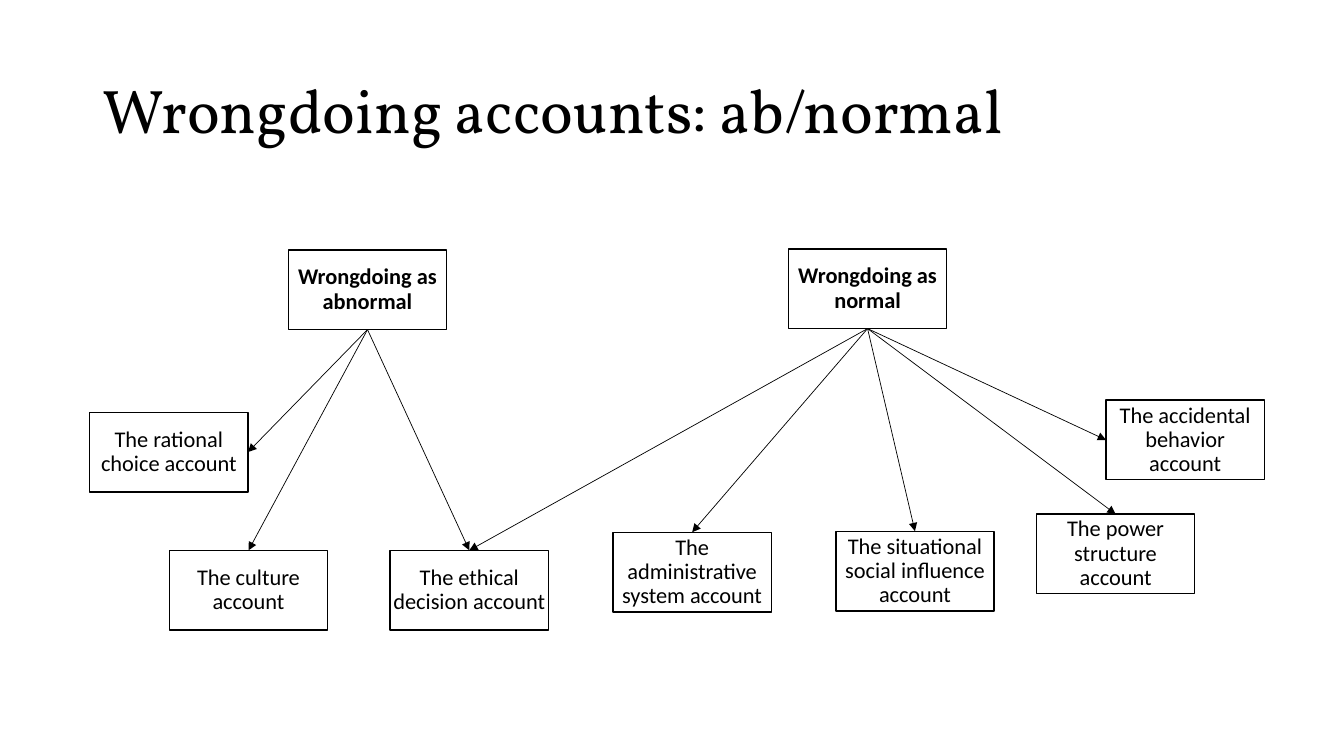
import pptx
import pptx.util
import pptx.dml.color
import pptx.enum.shapes
import pptx.enum.text
import pptx.oxml
import pptx.oxml.ns

Inches = pptx.util.Inches
Pt = pptx.util.Pt
BLACK = pptx.dml.color.RGBColor(0, 0, 0)
WHITE = pptx.dml.color.RGBColor(255, 255, 255)
WIDE, HIGH = 1.57, 0.79
TOP, LEFT, BOTTOM, RIGHT = range(4)

ROOTS = {
    "abnormal": (2.86, 2.48, "Wrongdoing as abnormal"),
    "normal": (7.82, 2.47, "Wrongdoing as normal"),
}
LEAVES = {
    "ethics": (3.87, 5.46, "The ethical decision account"),
    "choice": (0.89, 4.09, "The rational choice account"),
    "culture": (1.68, 5.46, "The culture account"),
    "chance": (10.97, 3.97, "The accidental behavior account"),
    "social": (8.29, 5.27, "The situational social influence account"),
    "power": (10.28, 5.1, "The power structure account"),
    "system": (6.08, 5.28, "The administrative system account"),
}
LINKS = [
    ("abnormal", "choice", RIGHT),
    ("abnormal", "culture", TOP),
    ("abnormal", "ethics", TOP),
    ("normal", "system", TOP),
    ("normal", "social", TOP),
    ("normal", "power", TOP),
    ("normal", "chance", LEFT),
    ("normal", "ethics", TOP),
]


def write(shape, text, size, font="Calibri", bold=False, align="LEFT", inset=(0.1, 0.05)):
    frame = shape.text_frame
    frame.word_wrap = True
    frame.vertical_anchor = pptx.enum.text.MSO_ANCHOR.MIDDLE
    frame.margin_left = frame.margin_right = Inches(inset[0])
    frame.margin_top = frame.margin_bottom = Inches(inset[1])
    para = frame.paragraphs[0]
    para.alignment = getattr(pptx.enum.text.PP_ALIGN, align)
    para.line_spacing = 0.9
    run = para.add_run()
    run.text = text
    run.font.name = font
    run.font.size = Pt(size)
    run.font.bold = bold
    run.font.color.rgb = BLACK


def title(slide, left, top, width, height):
    box = slide.shapes.add_textbox(Inches(left), Inches(top), Inches(width), Inches(height))
    write(box, "Wrongdoing accounts: ab/normal", 44, font="Vollkorn")


def node(slide, left, top, text, bold=False):
    box = slide.shapes.add_shape(
        pptx.enum.shapes.MSO_SHAPE.RECTANGLE,
        Inches(left), Inches(top), Inches(WIDE), Inches(HIGH))
    box.shadow.inherit = False
    box.fill.solid()
    box.fill.fore_color.rgb = WHITE
    box.line.color.rgb = BLACK
    box.line.width = Pt(1)
    write(box, text, 16, bold=bold, align="CENTER", inset=(0.01, 0.01))
    return box


def arrow(slide, start, end, side):
    link = slide.shapes.add_connector(pptx.enum.shapes.MSO_CONNECTOR.STRAIGHT, 0, 0, 0, 0)
    link.begin_connect(start, BOTTOM)
    link.end_connect(end, side)
    link.line.color.rgb = BLACK
    link.line.width = Pt(0.5)
    props = link.line._get_or_add_ln()
    tip = pptx.oxml.parse_xml(
        "<a:tailEnd %s type='triangle'/>" % pptx.oxml.ns.nsdecls("a"))
    props.append(tip)
    props.addnext(pptx.oxml.parse_xml("<a:effectLst %s/>" % pptx.oxml.ns.nsdecls("a")))


def chart(slide, left, top):
    nodes = {}
    for group, bold in ((ROOTS, True), (LEAVES, False)):
        for key, (x, y, text) in group.items():
            nodes[key] = node(slide, left + x, top + y, text, bold)
    for start, end, side in LINKS:
        arrow(slide, nodes[start], nodes[end], side)


def main():
    deck = pptx.Presentation()
    deck.slide_width = Inches(13.33)
    deck.slide_height = Inches(7.5)
    slide = deck.slides.add_slide(deck.slide_layouts[6])
    title(slide, 0.92, 0.4, 11.5, 1.45)
    chart(slide, 0, 0)
    deck.save("out.pptx")


if __name__ == "__main__":
    main()
